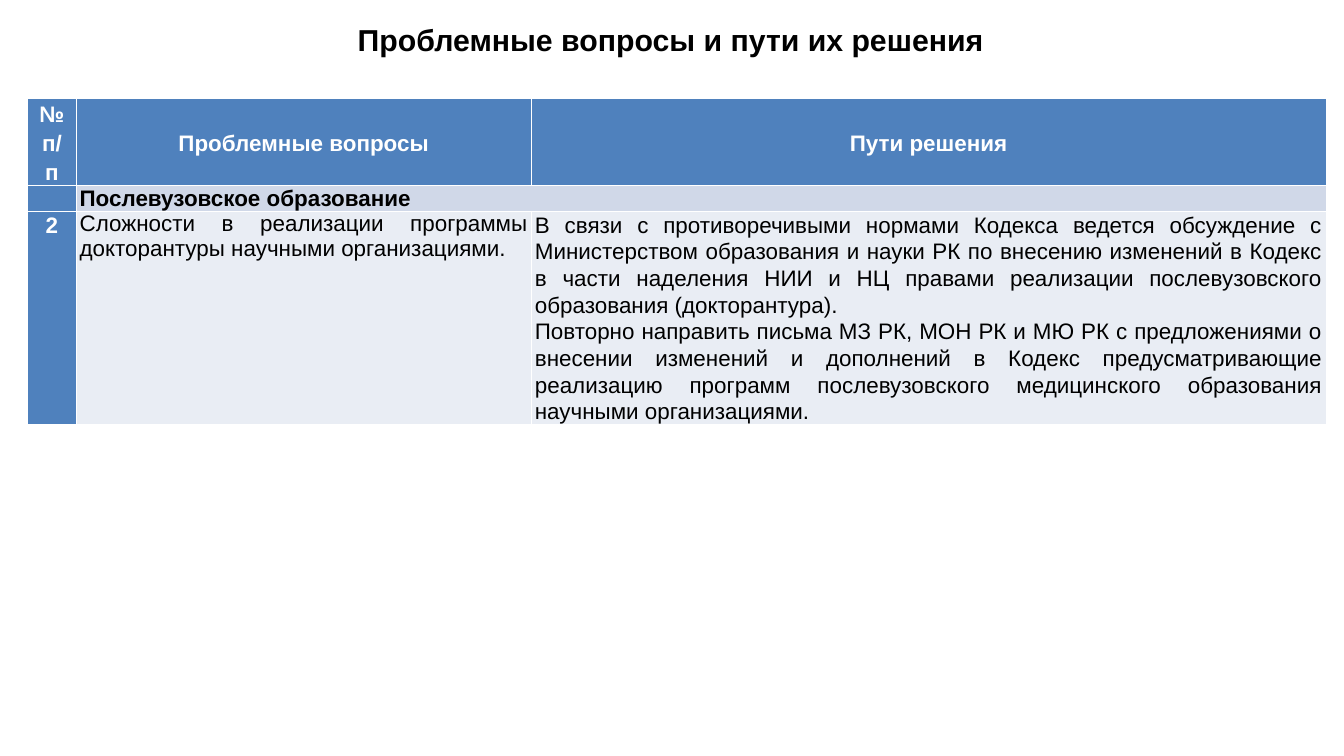
import pptx
import pptx.util
import pptx.dml.color
import pptx.enum.text

PX = 9144
ALIGN = pptx.enum.text.PP_ALIGN
ANCHOR = pptx.enum.text.MSO_ANCHOR


def color(code):
    return pptx.dml.color.RGBColor.from_string(code)


def write(frame, text, size=32, ink="000000", bold=False, align=ALIGN.JUSTIFY, line=1.06, after=0):
    frame.word_wrap = True
    for i, part in enumerate(text.split("\n")):
        para = frame.add_paragraph() if i else frame.paragraphs[0]
        para.alignment = align
        para.line_spacing = line
        para.space_before = pptx.util.Pt(0)
        para.space_after = pptx.util.Pt(after)
        run = para.add_run()
        run.text = part
        run.font.name = "Arial"
        run.font.size = pptx.util.Pt(size)
        run.font.bold = bold
        run.font.color.rgb = color(ink)


deck = pptx.Presentation()
deck.slide_width = 2666 * PX
deck.slide_height = 1500 * PX
slide = deck.slides.add_slide(deck.slide_layouts[5])

title = slide.shapes.title
title.left, title.top, title.width, title.height = [n * PX for n in (181, 39, 2299, 79)]
title.text_frame.vertical_anchor = ANCHOR.MIDDLE
write(title.text_frame, "Проблемные вопросы и пути их решения", size=43.2, bold=True, align=ALIGN.CENTER, line=1.0)

wides = [96, 903, 1576]
highs = [171, 52, 423]
table = slide.shapes.add_table(3, 3, 55 * PX, 195 * PX, sum(wides) * PX, sum(highs) * PX).table
table.first_col = True
for col, wide in zip(table.columns, wides):
    col.width = wide * PX
for row, high in zip(table.rows, highs):
    row.height = high * PX

fills = [
    ["4F81BD", "4F81BD", "4F81BD"],
    ["4F81BD", "D0D8E8", "D0D8E8"],
    ["4F81BD", "E9EDF4", "E9EDF4"],
]
for r, codes in enumerate(fills):
    for c, code in enumerate(codes):
        cell = table.cell(r, c)
        cell.fill.solid()
        cell.fill.fore_color.rgb = color(code)
        cell.margin_left = cell.margin_right = (7 if r else 15) * PX
        cell.margin_top = cell.margin_bottom = 0
        cell.vertical_anchor = ANCHOR.TOP if r else ANCHOR.MIDDLE
table.cell(1, 1).merge(table.cell(1, 2))

for c, head in enumerate(["№ п/п", "Проблемные вопросы", "Пути решения"]):
    write(table.cell(0, c).text_frame, head, ink="FFFFFF", bold=True, align=ALIGN.CENTER, line=1.15, after=10)

write(table.cell(1, 1).text_frame, "Послевузовское образование", bold=True)
write(table.cell(2, 0).text_frame, "2", ink="FFFFFF", bold=True, align=ALIGN.CENTER)
write(
    table.cell(2, 1).text_frame,
    "Сложности в реализации программы докторантуры научными организациями.",
    line=1.0,
)
write(
    table.cell(2, 2).text_frame,
    "В связи с противоречивыми нормами Кодекса ведется обсуждение с Министерством "
    "образования и науки РК по внесению изменений в Кодекс в части наделения НИИ и НЦ "
    "правами реализации послевузовского образования (докторантура).\n"
    "Повторно направить письма МЗ РК, МОН РК и МЮ РК с предложениями о внесении "
    "изменений и дополнений в Кодекс предусматривающие реализацию программ "
    "послевузовского медицинского образования научными организациями.",
)

deck.save("out.pptx")
